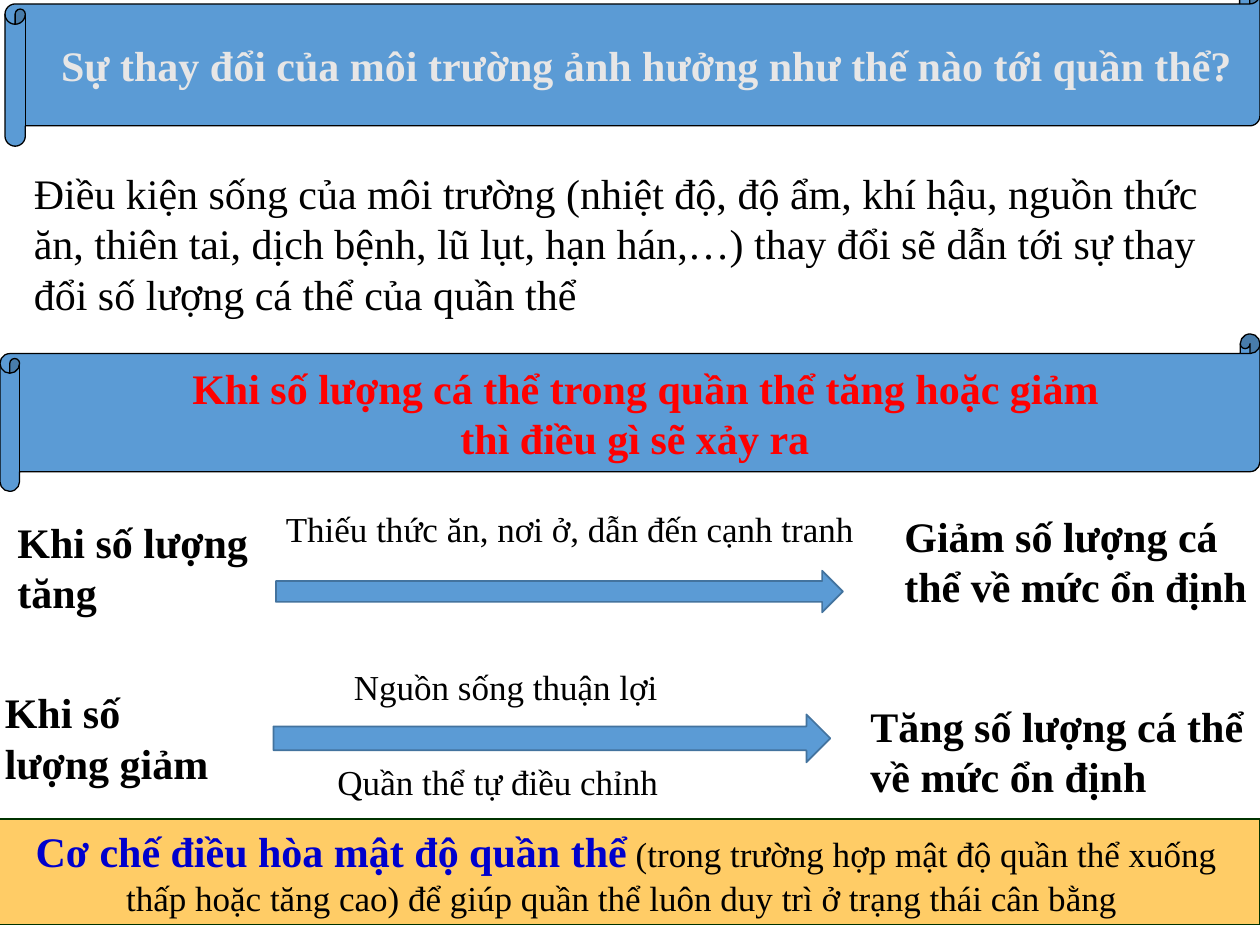
from dataclasses import dataclass

from pptx import Presentation
from pptx.dml.color import RGBColor
from pptx.enum.shapes import MSO_SHAPE as Shape
from pptx.enum.text import MSO_ANCHOR as Anchor, PP_ALIGN as Align
from pptx.util import Inches, Pt

SLIDE_WIDTH, SLIDE_HEIGHT = Inches(10), Inches(7.5)
COLUMNS, ROWS = 100, 75
FONT = "Times New Roman"
BLACK, RED, BLUE, LIGHT = "000000", "FF0000", "0000CC", "E7E6E6"
STEEL, STEEL_DARK, ORANGE, GREEN_DARK = "5B9BD5", "43739E", "FFCC66", "003300"
LARGE, SMALL = 24, 20


@dataclass(frozen=True)
class Box:
    """Left, top, width and height in grid columns and rows."""
    left: float
    top: float
    width: float
    height: float

    def lengths(self) -> tuple[int, int, int, int]:
        column, row = SLIDE_WIDTH / COLUMNS, SLIDE_HEIGHT / ROWS
        return (round(self.left * column), round(self.top * row),
                round(self.width * column), round(self.height * row))


@dataclass(frozen=True)
class Words:
    text: str
    size: int = LARGE
    color: str = BLACK
    bold: bool = False


@dataclass(frozen=True)
class Line:
    """One paragraph; indent is its left margin in inches."""
    runs: tuple[Words, ...]
    indent: float = 0


@dataclass(frozen=True)
class Label:
    box: Box
    words: Words


@dataclass(frozen=True)
class Panel:
    kind: Shape
    box: Box
    fill: str
    outline: str
    outline_width: float = 0.75
    lines: tuple[Line, ...] = ()
    wrap: bool = False


SCROLLS = (
    Panel(Shape.HORIZONTAL_SCROLL, Box(0.4, -1.3, 99.6, 12.9), STEEL, BLACK, lines=(
        Line((Words("Sự thay đổi của môi trường ảnh hưởng như thế nào tới quần thể?",
                    color=LIGHT, bold=True),), indent=0.14),)),
    Panel(Shape.HORIZONTAL_SCROLL, Box(0, 26.5, 100, 12.5), STEEL, BLACK, lines=(
        Line((Words("Khi số lượng cá thể trong quần thể tăng hoặc giảm",
                    color=RED, bold=True),), indent=0.17),
        Line((Words("thì điều gì sẽ xảy ra", color=RED, bold=True),)))),
)
ARROWS = (
    Panel(Shape.RIGHT_ARROW, Box(21.9, 45.3, 45, 3.3), STEEL, STEEL_DARK, 1),
    Panel(Shape.RIGHT_ARROW, Box(21.7, 56.7, 44.2, 3.8), STEEL, STEEL_DARK, 1),
)
CONCLUSION = Panel(Shape.RECTANGLE, Box(-0.6, 65, 100.6, 8.4), ORANGE, GREEN_DARK, lines=(
    Line((Words("Cơ chế điều hòa mật độ quần thể", color=BLUE, bold=True),
          Words(" (trong trường hợp mật độ quần thể xuống thấp hoặc tăng cao) "
                "để giúp quần thể luôn duy trì ở trạng thái cân bằng ", SMALL))),), wrap=True)
LABELS = (
    Label(Box(1.7, 12.8, 98.3, 13.1), Words(
        "Điều kiện sống của môi trường (nhiệt độ, độ ẩm, khí hậu, nguồn thức ăn, "
        "thiên tai, dịch bệnh, lũ lụt, hạn hán,…) thay đổi sẽ dẫn tới sự thay đổi "
        "số lượng cá thể của quần thể")),
    Label(Box(0.4, 40.5, 21.2, 9.1), Words("Khi số lượng tăng", bold=True)),
    Label(Box(21.7, 39.8, 49.2, 4.4), Words("Thiếu thức ăn, nơi ở, dẫn đến cạnh tranh", SMALL)),
    Label(Box(70.8, 40, 30, 9.1), Words("Giảm số lượng cá thể về mức ổn định", bold=True)),
    Label(Box(-0.6, 54, 20, 9.1), Words("Khi số lượng giảm", bold=True)),
    Label(Box(27.1, 52.3, 38.3, 4.4), Words("Nguồn sống thuận lợi", SMALL)),
    Label(Box(25.8, 59.9, 28.3, 4.4), Words("Quần thể tự điều chỉnh", SMALL)),
    Label(Box(68.1, 55.1, 33.1, 9.1), Words("Tăng số lượng cá thể về mức ổn định", bold=True)),
)


def rgb(color: str) -> RGBColor:
    return RGBColor.from_string(color)


def add_words(paragraph, words: Words) -> None:
    run = paragraph.add_run()
    run.text = words.text
    run.font.name = FONT
    run.font.size = Pt(words.size)
    run.font.bold = words.bold
    run.font.color.rgb = rgb(words.color)


def draw_panel(slide, panel: Panel) -> None:
    shape = slide.shapes.add_shape(panel.kind, *panel.box.lengths())
    shape.shadow.inherit = False
    shape.fill.solid()
    shape.fill.fore_color.rgb = rgb(panel.fill)
    shape.line.color.rgb = rgb(panel.outline)
    shape.line.width = Pt(panel.outline_width)
    frame = shape.text_frame
    frame.word_wrap = panel.wrap
    frame.vertical_anchor = Anchor.MIDDLE
    for index, line in enumerate(panel.lines):
        paragraph = frame.add_paragraph() if index else frame.paragraphs[0]
        paragraph.alignment = Align.CENTER
        if line.indent:
            paragraph._p.get_or_add_pPr().set("marL", str(Inches(line.indent)))
        for words in line.runs:
            add_words(paragraph, words)


def draw_label(slide, label: Label) -> None:
    frame = slide.shapes.add_textbox(*label.box.lengths()).text_frame
    frame.word_wrap = True
    add_words(frame.paragraphs[0], label.words)


def main() -> None:
    presentation = Presentation()
    presentation.slide_width, presentation.slide_height = SLIDE_WIDTH, SLIDE_HEIGHT
    slide = presentation.slides.add_slide(presentation.slide_layouts[6])
    for panel in (*SCROLLS, *ARROWS, CONCLUSION):
        draw_panel(slide, panel)
    for label in LABELS:
        draw_label(slide, label)
    presentation.save("out.pptx")


if __name__ == "__main__":
    main()
